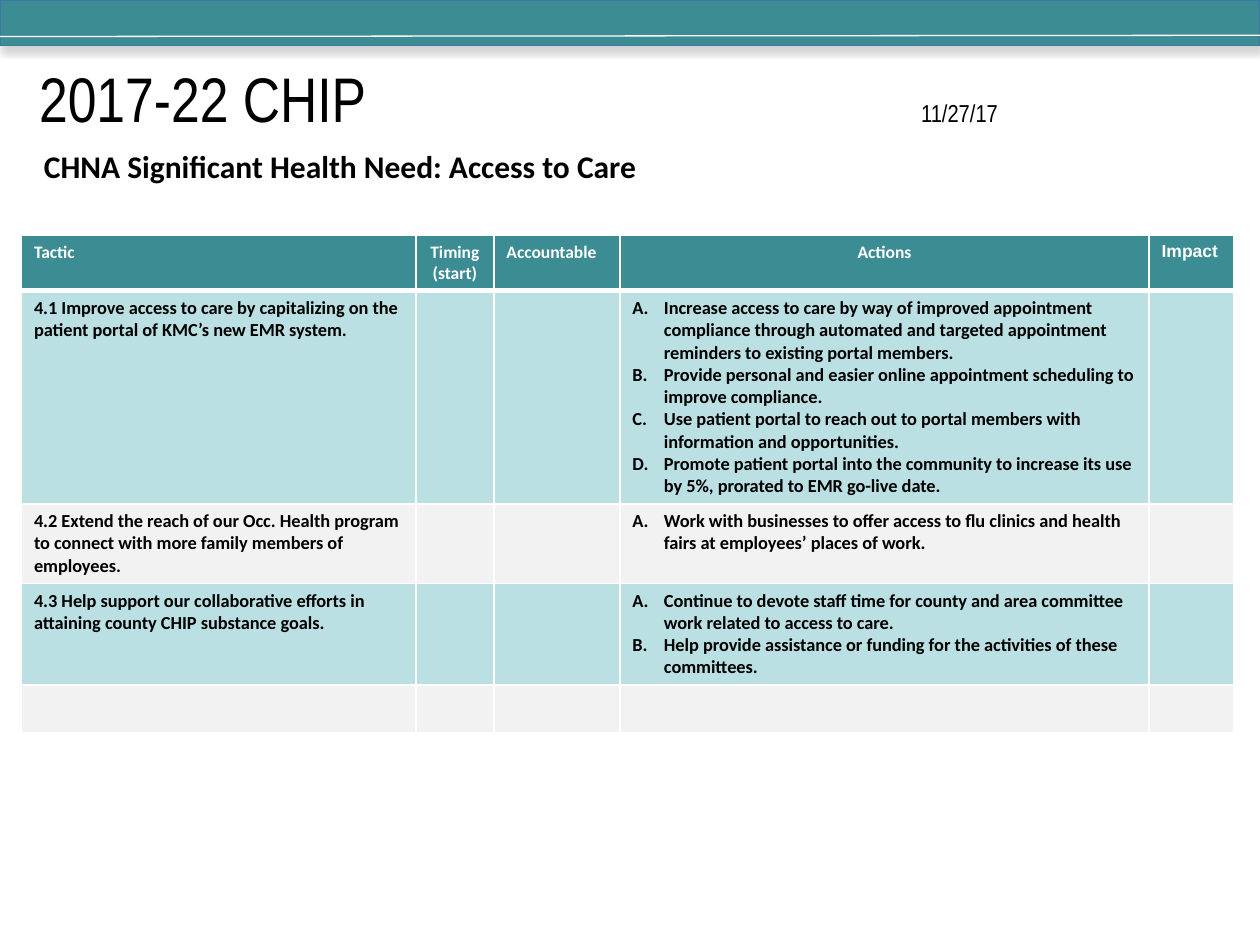
"""Build the 2017-22 CHIP slide on access to care."""
import pptx
import pptx.dml.color
import pptx.enum.shapes
import pptx.enum.text
import pptx.oxml
import pptx.util

Inches = pptx.util.Inches
Pt = pptx.util.Pt
RGB = pptx.dml.color.RGBColor.from_string
ALIGN = pptx.enum.text.PP_ALIGN
ANCHOR = pptx.enum.text.MSO_ANCHOR
NS = 'xmlns:a="http://schemas.openxmlformats.org/drawingml/2006/main"'
COLORS = {"teal": "3C8C93", "pale": "BBE0E3", "gray": "F2F2F2",
          "edge": "3E76A8", "white": "FFFFFF", "black": "000000"}


def add_xml(parent, xml):
    parent.append(pptx.oxml.parse_xml(xml))


def write(para, text, color="black", **values):
    span = para.add_run()
    span.text = text
    span.font.color.rgb = RGB(COLORS[color])
    for name, value in values.items():
        setattr(span.font, name, value)


deck = pptx.Presentation()
deck.slide_width, deck.slide_height = Inches(10), Inches(7.5)
page = deck.slides.add_slide(deck.slide_layouts[5])

bar = page.shapes.add_shape(pptx.enum.shapes.MSO_SHAPE.RECTANGLE,
                            Inches(0), Inches(0), Inches(10), Inches(0.36))
bar.fill.solid()
bar.fill.fore_color.rgb = RGB(COLORS["teal"])
bar.line.color.rgb = RGB(COLORS["edge"])
bar.line.width = Pt(0.75)
add_xml(bar._element.spPr, f'<a:effectLst {NS}><a:outerShdw blurRad="{Pt(4)}" dist="{Pt(3)}" '
        f'dir="5400000" algn="t" rotWithShape="0"><a:srgbClr val="{COLORS["black"]}">'
        '<a:alpha val="16000"/></a:srgbClr></a:outerShdw></a:effectLst>')

stripe = page.shapes.add_connector(pptx.enum.shapes.MSO_CONNECTOR.STRAIGHT,
                                   Inches(0), Inches(0.29), Inches(10), Inches(0.28))
stripe.line.color.rgb = RGB(COLORS["white"])
stripe.line.width = Pt(0.75)
add_xml(stripe._element.spPr, f"<a:effectLst {NS}/>")

title = page.shapes.title
title.left, title.top = Inches(0.21), Inches(0.5)
title.width, title.height = Inches(9.57), Inches(0.54)
title.text_frame.vertical_anchor = ANCHOR.MIDDLE
title.text_frame.auto_size = pptx.enum.text.MSO_AUTO_SIZE.NONE
para = title.text_frame.paragraphs[0]
para.alignment = ALIGN.LEFT
add_xml(para._p.get_or_add_pPr(),
        f'<a:tabLst {NS}><a:tab pos="{Inches(7)}" algn="l"/></a:tabLst>')
write(para, "2017-22 CHIP\t", name="Arial Narrow", size=Pt(36))
write(para, "11/27/17", name="Arial Narrow", size=Pt(14))

headers = [("Tactic", ALIGN.LEFT, "Calibri"), ("Timing (start)", ALIGN.CENTER, "Calibri"),
           ("Accountable", ALIGN.LEFT, "Calibri"), ("Actions", ALIGN.CENTER, "Calibri"),
           ("Impact", ALIGN.LEFT, "Arial")]
tactics = [
    ("4.1 Improve access to care by capitalizing on the patient portal of KMC’s new EMR system.",
     ["Increase access to care by way of improved appointment compliance through automated "
      "and targeted appointment reminders to existing portal members.",
      "Provide personal and easier online appointment scheduling to improve compliance.",
      "Use patient portal to reach out to portal members with information and opportunities.",
      "Promote patient portal into the community to increase its use by 5%, "
      "prorated to EMR go-live date."]),
    ("4.2 Extend the reach of our Occ. Health program to connect with more family members "
     "of employees.",
     ["Work with businesses to offer access to flu clinics and health fairs "
      "at employees’ places of work."]),
    ("4.3 Help support our collaborative efforts in attaining county CHIP substance goals.",
     ["Continue to devote staff time for county and area committee work "
      "related to access to care.",
      "Help provide assistance or funding for the activities of these committees."]),
]
widths = [3.13, 0.62, 1, 4.2, 0.67]
heights = [0.43, 1.69, 0.63, 0.8, 0.38]

table = page.shapes.add_table(len(heights), len(widths), Inches(0.17), Inches(1.87),
                              Inches(sum(widths)), Inches(sum(heights))).table
for column, width in zip(table.columns, widths):
    column.width = Inches(width)
for index, (row, height) in enumerate(zip(table.rows, heights)):
    row.height = Inches(height)
    fill = "teal" if index == 0 else "pale" if index % 2 else "gray"
    edges = {"lnL": 1, "lnR": 1, "lnT": 3 if index == 1 else 1, "lnB": 1 if index else 3}
    for cell in row.cells:
        for edge, weight in edges.items():
            add_xml(cell._tc.get_or_add_tcPr(),
                    f'<a:{edge} {NS} w="{Pt(weight)}"><a:solidFill>'
                    f'<a:srgbClr val="{COLORS["white"]}"/></a:solidFill></a:{edge}>')
        cell.fill.solid()
        cell.fill.fore_color.rgb = RGB(COLORS[fill])
        if index == len(heights) - 1:
            cell.margin_top = cell.margin_bottom = Inches(0.03)

for column, (text, alignment, font) in enumerate(headers):
    para = table.cell(0, column).text_frame.paragraphs[0]
    para.alignment = alignment
    write(para, text, "white", name=font, size=Pt(10), bold=True)

body = {"name": "Calibri", "size": Pt(10.5), "bold": True}
for row, (tactic, actions) in enumerate(tactics, start=1):
    write(table.cell(row, 0).text_frame.paragraphs[0], tactic, **body)
    frame = table.cell(row, 3).text_frame
    for number, action in enumerate(actions):
        para = frame.add_paragraph() if number else frame.paragraphs[0]
        properties = para._p.get_or_add_pPr()
        properties.set("marL", str(Inches(0.25)))
        properties.set("indent", str(-Inches(0.25)))
        add_xml(properties, f'<a:buFont {NS} typeface="+mj-lt"/>')
        add_xml(properties, f'<a:buAutoNum {NS} type="alphaUcPeriod"/>')
        write(para, action, **body)

box = page.shapes.add_textbox(Inches(0.25), Inches(1.12), Inches(4.95), Inches(0.71))
box.text_frame.word_wrap = False
write(box.text_frame.paragraphs[0], "CHNA Significant Health Need: Access to Care",
      name="Calibri", size=Pt(18), bold=True)

deck.save("out.pptx")
